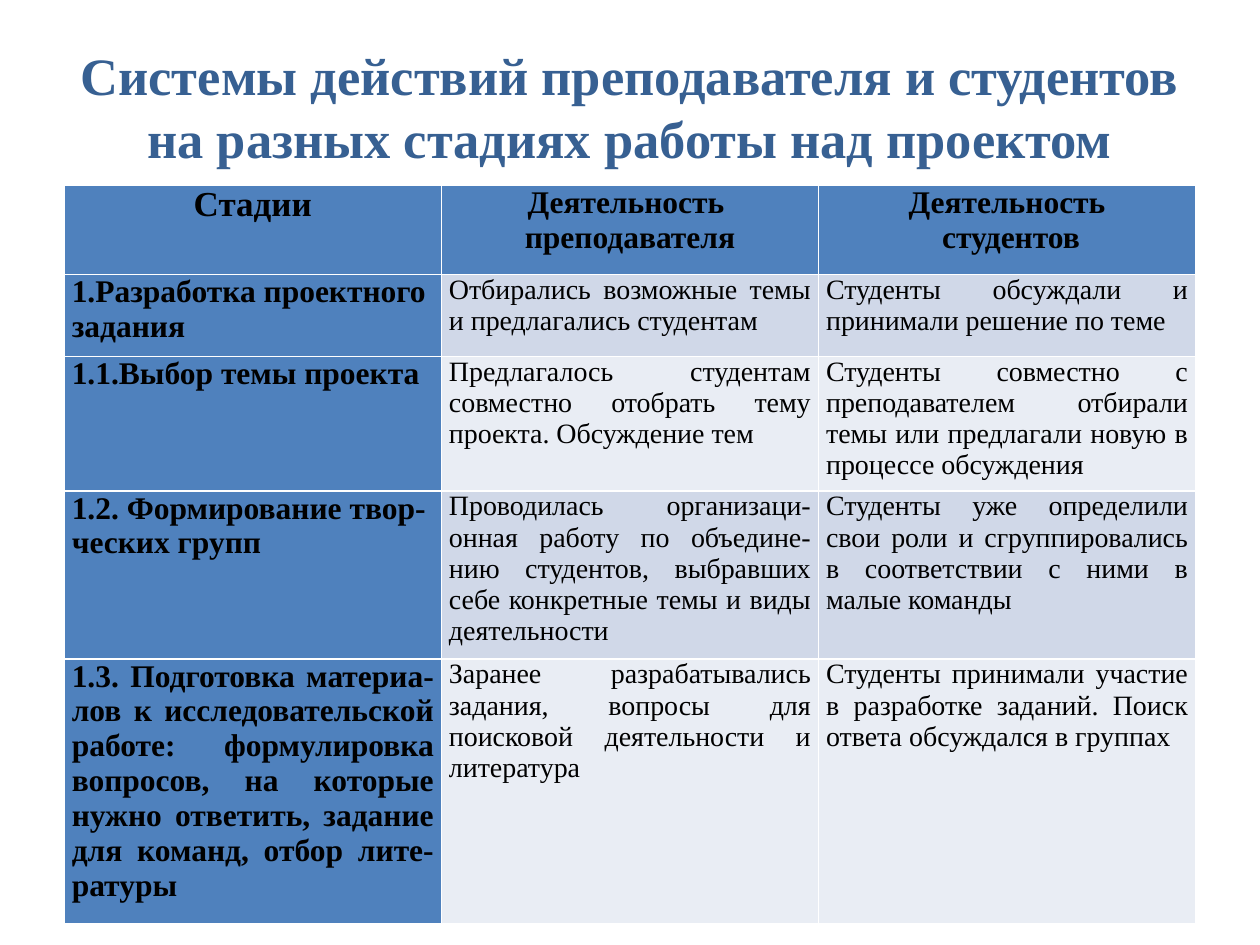
from pptx import Presentation
from pptx.dml.color import RGBColor
from pptx.enum.text import MSO_ANCHOR, PP_ALIGN
from pptx.util import Inches, Pt

NAVY = RGBColor(0x37, 0x60, 0x92)
BLUE = RGBColor(0x4F, 0x81, 0xBD)
LIGHT = RGBColor(0xD0, 0xD8, 0xE8)
PALE = RGBColor(0xE9, 0xED, 0xF4)
BLACK = RGBColor(0, 0, 0)

TITLE = "Системы действий преподавателя и студентов на разных стадиях работы над проектом"
HEIGHTS = [0.71, 0.65, 0.98, 1.31, 1.96]
ROWS = [
    ["Стадии", "Деятельность \nпреподавателя", "Деятельность\n студентов"],
    ["1.Разработка проектного задания",
     "Отбирались возможные темы и предлагались студентам",
     "Студенты обсуждали и принимали решение по теме"],
    ["1.1.Выбор темы проекта",
     "Предлагалось студентам совместно отобрать тему проекта. Обсуждение тем",
     "Студенты совместно с преподавателем отбирали темы или предлагали новую "
     "в процессе обсуждения"],
    ["1.2. Формирование твор-ческих групп",
     "Проводилась организаци-онная работу по объедине-нию студентов, "
     "выбравших себе конкретные темы и виды деятельности",
     "Студенты уже определили свои роли и сгруппировались в соответствии "
     "с ними в малые команды"],
    ["1.3. Подготовка материа-лов к исследовательской работе: формулировка "
     "вопросов, на которые нужно ответить, задание для команд, отбор лите-ратуры",
     "Заранее разрабатывались задания, вопросы для поисковой деятельности "
     "и литература",
     "Студенты принимали участие в разработке заданий. Поиск ответа "
     "обсуждался в группах"],
]


def style(frame, size, bold, color, align):
    for para in frame.paragraphs:
        para.alignment = align
        for run in para.runs:
            font = run.font
            font.name = "Times New Roman"
            font.size, font.bold = Pt(size), bold
            font.color.rgb = color


prs = Presentation()
prs.slide_width, prs.slide_height = Inches(10), Inches(7.5)
slide = prs.slides.add_slide(prs.slide_layouts[6])

title = slide.shapes.add_textbox(Inches(0.5), Inches(0.13), Inches(9), Inches(1.42))
frame = title.text_frame
frame.word_wrap = True
frame.vertical_anchor = MSO_ANCHOR.MIDDLE
frame.text = TITLE
style(frame, 30, True, NAVY, PP_ALIGN.CENTER)

# The default table style supplies the white grid and the thick header rule.
table = slide.shapes.add_table(
    len(ROWS), 3, Inches(0.51), Inches(1.47), Inches(8.98), Inches(sum(HEIGHTS))
).table
margins = {"margin_left": 0.06, "margin_right": 0.06, "margin_top": 0, "margin_bottom": 0}
last = len(ROWS) - 1

for r, texts in enumerate(ROWS):
    table.rows[r].height = Inches(HEIGHTS[r])
    for c, text in enumerate(texts):
        cell = table.cell(r, c)
        for name, value in margins.items():
            setattr(cell, name, Inches(value))
        head = r == 0 or c == 0
        cell.fill.solid()
        cell.fill.fore_color.rgb = BLUE if head else LIGHT if r % 2 else PALE
        cell.text_frame.text = text
        if r == 0:
            align = PP_ALIGN.CENTER
        elif c == 0 and r < last:
            align = PP_ALIGN.LEFT
        else:
            align = PP_ALIGN.JUSTIFY
        size = 20 if r == c == 0 else 18 if head else 16
        style(cell.text_frame, size, head, BLACK, align)

prs.save("out.pptx")
